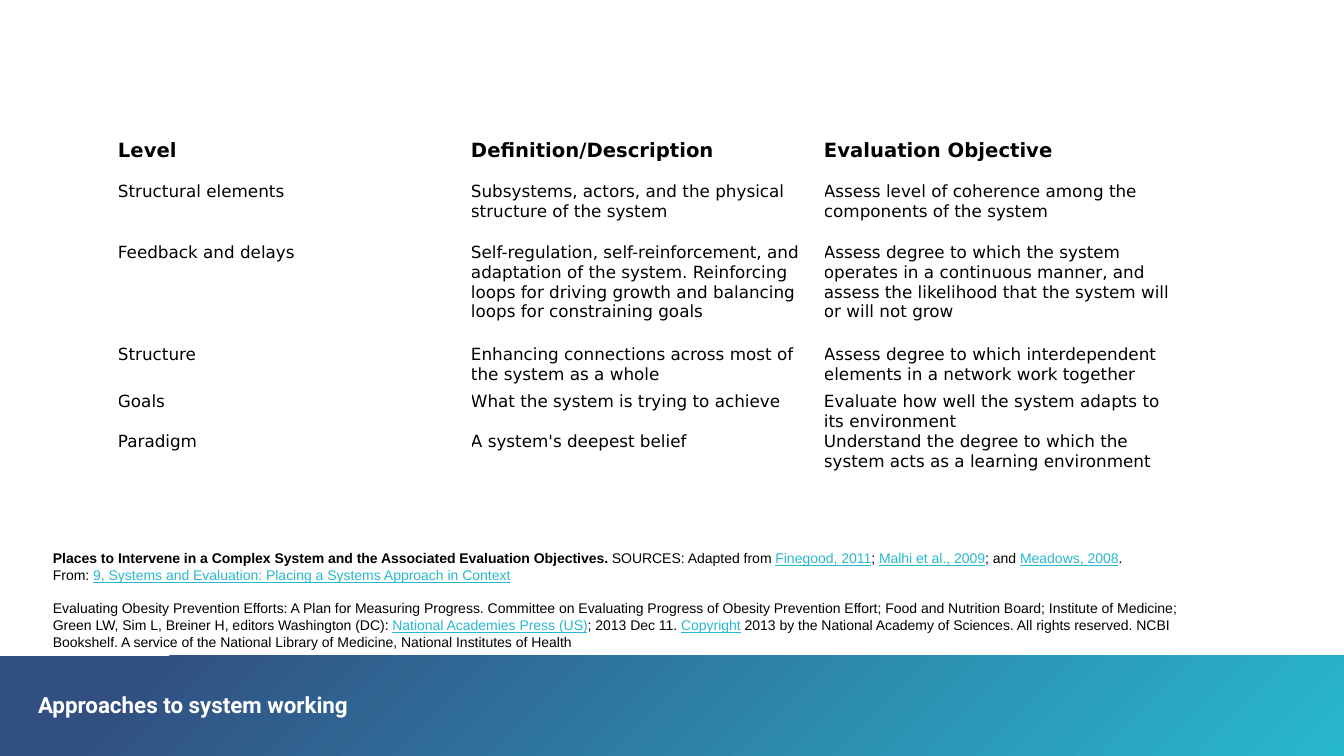
from pptx import Presentation
from pptx.dml.color import RGBColor
from pptx.enum.shapes import MSO_SHAPE
from pptx.enum.text import MSO_ANCHOR, MSO_AUTO_SIZE, PP_ALIGN
from pptx.util import Emu, Pt

RECT = MSO_SHAPE.RECTANGLE
TOP, MIDDLE = MSO_ANCHOR.TOP, MSO_ANCHOR.MIDDLE
LEFT = PP_ALIGN.LEFT
NO_FIT, GROW = MSO_AUTO_SIZE.NONE, MSO_AUTO_SIZE.SHAPE_TO_FIT_TEXT

NAVY = RGBColor(0x32, 0x4F, 0x82)
TEAL = RGBColor(0x28, 0xB8, 0xCE)
BLACK = RGBColor(0x00, 0x00, 0x00)
WHITE = RGBColor(0xFF, 0xFF, 0xFF)

SLIDE_W, SLIDE_H = 1344, 756
EMU_PER_PX = 12192000 / SLIDE_W
TITLE_ONLY = 5


def px(n):
    return Emu(round(n * EMU_PER_PX))


class Deck:
    table_font, body_font, title_font = "DejaVu Sans", "Arial", "Roboto"

    def __init__(self):
        self.prs = Presentation()
        self.prs.slide_width, self.prs.slide_height = px(SLIDE_W), px(SLIDE_H)
        self.slide = self.prs.slides.add_slide(self.prs.slide_layouts[TITLE_ONLY])

    def run(self, p, text, font, size, color=BLACK, bold=False, underline=False):
        r = p.add_run()
        r.text = text
        f = r.font
        f.name, f.size, f.bold, f.underline = font, Pt(size), bold, underline
        f.color.rgb = color

    def band(self, x, y, w, h):
        sp = self.slide.shapes.add_shape(RECT, px(x), px(y), px(w), px(h))
        sp.shadow.inherit = False
        sp.line.fill.background()
        sp.fill.gradient()
        sp.fill.gradient_angle = 315
        for stop, position, color in zip(sp.fill.gradient_stops, (0.1, 1), (NAVY, TEAL)):
            stop.position = position
            stop.color.rgb = color
        # The title sits on the band
        self.slide.shapes.title.element.addprevious(sp.element)

    def title(self, text, x, y, w, h):
        sp = self.slide.shapes.title
        sp.left, sp.top, sp.width, sp.height = px(x), px(y), px(w), px(h)
        tf = sp.text_frame
        tf.margin_left = tf.margin_right = tf.margin_top = tf.margin_bottom = 0
        tf.vertical_anchor, tf.auto_size, tf.word_wrap = TOP, NO_FIT, True
        p = tf.paragraphs[0]
        p.alignment, p.line_spacing = LEFT, 0.9
        self.run(p, text, self.title_font, 16, WHITE, bold=True)

    def table(self, rows, x, y, col_w, heights):
        cols = len(rows[0])
        frame = self.slide.shapes.add_table(
            len(rows), cols, px(x), px(y), px(col_w * cols), px(sum(heights)))
        table = frame.table
        table.first_row = table.horz_banding = False
        for col in table.columns:
            col.width = px(col_w)
        for i, (texts, height) in enumerate(zip(rows, heights)):
            table.rows[i].height = px(height)
            for j, text in enumerate(texts):
                cell = table.cell(i, j)
                cell.fill.background()
                cell.margin_left = cell.margin_right = cell.margin_bottom = 0
                # The first body row stands clear of the header
                cell.margin_top = px(20 if i == 1 else 0)
                cell.vertical_anchor = TOP
                self.run(cell.text_frame.paragraphs[0], text, self.table_font,
                         14 if i == 0 else 12, bold=i == 0)

    def text_box(self, paragraphs, x, y, w, h):
        """Each paragraph is (space before, [(text, style), ...])."""
        tf = self.slide.shapes.add_textbox(px(x), px(y), px(w), px(h)).text_frame
        tf.word_wrap, tf.auto_size, tf.vertical_anchor = True, GROW, MIDDLE
        for i, (space, runs) in enumerate(paragraphs):
            p = tf.paragraphs[0] if i == 0 else tf.add_paragraph()
            if space:
                p.space_before = Pt(space)
            for text, style in runs:
                self.run(p, text, self.body_font, 10, **style)


PLAIN, STRONG = {}, {"bold": True}
LINK = {"color": TEAL, "underline": True}

LEVELS = [
    ("Level", "Definition/Description", "Evaluation Objective"),
    ("Structural elements",
     "Subsystems, actors, and the physical structure of the system",
     "Assess level of coherence among the components of the system"),
    ("Feedback and delays",
     "Self-regulation, self-reinforcement, and adaptation of the system. "
     "Reinforcing loops for driving growth and balancing loops for constraining goals",
     "Assess degree to which the system operates in a continuous manner, "
     "and assess the likelihood that the system will or will not grow"),
    ("Structure",
     "Enhancing connections across most of the system as a whole",
     "Assess degree to which interdependent elements in a network work together"),
    ("Goals",
     "What the system is trying to achieve",
     "Evaluate how well the system adapts to its environment"),
    ("Paradigm",
     "A system's deepest belief",
     "Understand the degree to which the system acts as a learning environment"),
]
ROW_HEIGHTS = [23, 81, 102, 47, 40, 40]

SOURCES = [
    (0, [("Places to Intervene in a Complex System and the Associated "
          "Evaluation Objectives. ", STRONG),
         ("SOURCES: Adapted from ", PLAIN), ("Finegood, 2011", LINK),
         ("; ", PLAIN), ("Malhi et al., 2009", LINK),
         ("; and ", PLAIN), ("Meadows, 2008", LINK), (".", PLAIN)]),
    (0, [("From: ", PLAIN),
         ("9, Systems and Evaluation: Placing a Systems Approach in Context", LINK)]),
    (11.5, [("Evaluating Obesity Prevention Efforts: A Plan for Measuring Progress. "
             "Committee on Evaluating Progress of Obesity Prevention Effort; "
             "Food and Nutrition Board; Institute of Medicine; Green LW, Sim L, "
             "Breiner H, editors Washington (DC): ", PLAIN),
            ("National Academies Press (US)", LINK),
            ("; 2013 Dec 11. ", PLAIN), ("Copyright", LINK),
            (" 2013 by the National Academy of Sciences. All rights reserved. "
             "NCBI Bookshelf. A service of the National Library of Medicine, "
             "National Institutes of Health", PLAIN)]),
]


def main():
    deck = Deck()
    # Footer band with the title
    deck.band(0, 656, SLIDE_W, 100)
    deck.title("Approaches to system working", 38, 694, 396, 24)
    # Levels of intervention
    deck.table(LEVELS, 118, 139, 353, ROW_HEIGHTS)
    # Sources
    deck.text_box(SOURCES, 43, 544, 1170, 112)
    deck.prs.save("out.pptx")


if __name__ == "__main__":
    main()
